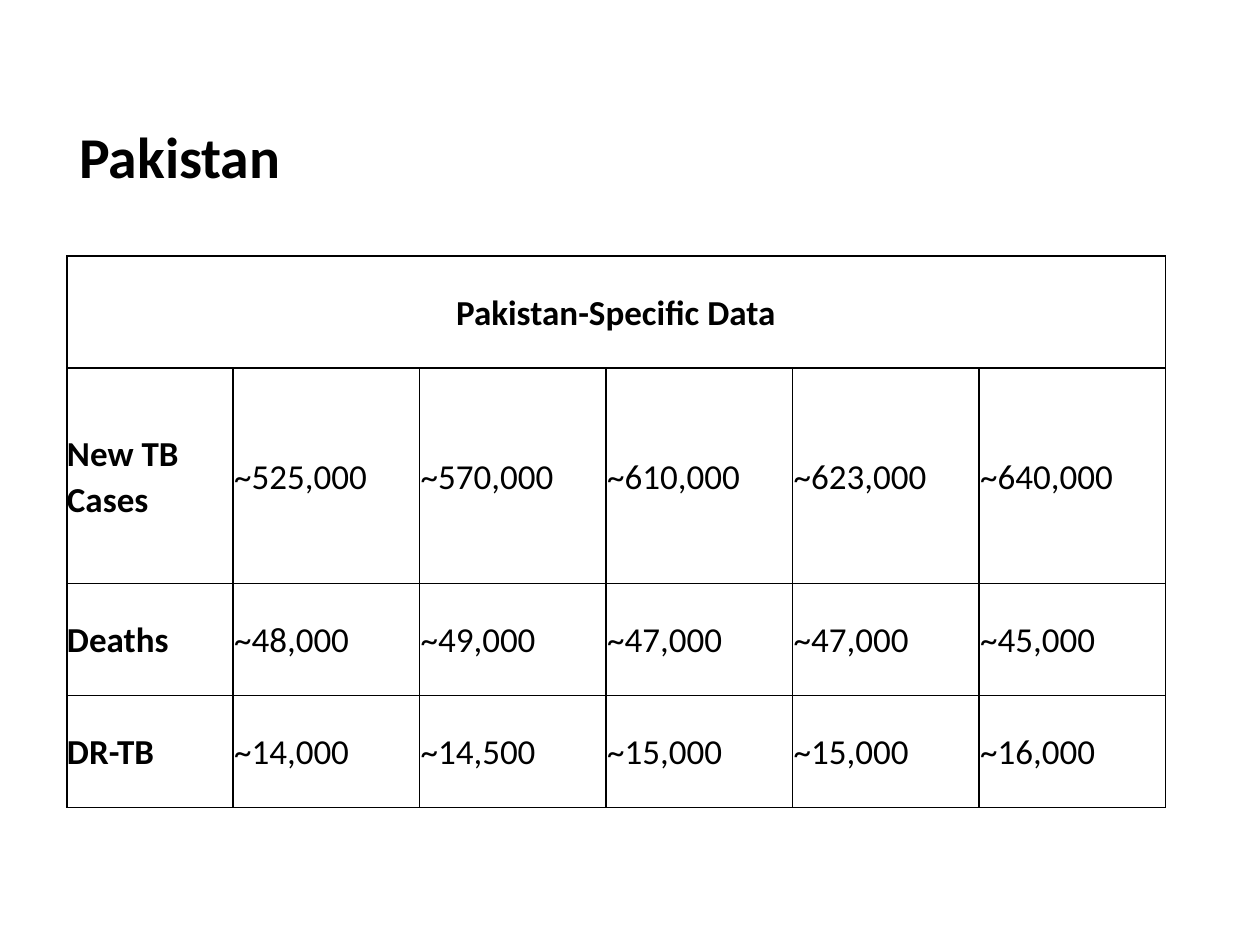
from lxml.etree import SubElement
from pptx import Presentation
from pptx.dml.color import RGBColor
from pptx.enum.text import MSO_ANCHOR, PP_ALIGN
from pptx.oxml.ns import qn
from pptx.util import Cm, Pt

BLACK = RGBColor(0x00, 0x00, 0x00)
FONT = "Calibri"
HEADING = "Pakistan-Specific Data"
ROWS = [
    ["New TB Cases", "~525,000", "~570,000", "~610,000", "~623,000", "~640,000"],
    ["Deaths", "~48,000", "~49,000", "~47,000", "~47,000", "~45,000"],
    ["DR-TB", "~14,000", "~14,500", "~15,000", "~15,000", "~16,000"],
]
COLUMN_WIDTHS = [3.35] + [3.76] * 5
ROW_HEIGHTS = [2.26, 4.34, 2.26, 2.26]


def add_text(paragraph, text, size, bold):
    run = paragraph.add_run()
    run.text = text
    run.font.name = FONT
    run.font.size = Pt(size)
    run.font.bold = bold
    run.font.color.rgb = BLACK


def add_borders(cell):
    properties = cell._tc.get_or_add_tcPr()
    for side in ("a:lnL", "a:lnR", "a:lnT", "a:lnB"):
        line = SubElement(properties, qn(side), w=str(Pt(1)))
        fill = SubElement(line, qn("a:solidFill"))
        SubElement(fill, qn("a:srgbClr"), val=str(BLACK))


presentation = Presentation()
presentation.slide_width = Cm(25.4)
presentation.slide_height = Cm(19.05)
slide = presentation.slides.add_slide(presentation.slide_layouts[6])

# Title
title = slide.shapes.add_textbox(Cm(1.35), Cm(1.27), Cm(19.58), Cm(3.89))
title.text_frame.word_wrap = True
title.text_frame.vertical_anchor = MSO_ANCHOR.MIDDLE
paragraph = title.text_frame.paragraphs[0]
paragraph.line_spacing = 0.9
add_text(paragraph, "Pakistan", 33, True)

# Table grid
table = slide.shapes.add_table(
    len(ROW_HEIGHTS), len(COLUMN_WIDTHS), Cm(1.35), Cm(5.16),
    Cm(sum(COLUMN_WIDTHS)), Cm(sum(ROW_HEIGHTS))).table
table.first_row = False
table.horz_banding = False
for column, width in zip(table.columns, COLUMN_WIDTHS):
    column.width = Cm(width)
for row, height in zip(table.rows, ROW_HEIGHTS):
    row.height = Cm(height)
table.cell(0, 0).merge(table.cell(0, len(COLUMN_WIDTHS) - 1))

# Cell formatting and text
for row_index, values in enumerate([[HEADING] + [""] * 5] + ROWS):
    for column_index, value in enumerate(values):
        cell = table.cell(row_index, column_index)
        add_borders(cell)
        cell.fill.background()
        cell.vertical_anchor = MSO_ANCHOR.MIDDLE
        cell.margin_left = Cm(0.02 if column_index else 0)
        cell.margin_top = cell.margin_right = cell.margin_bottom = Cm(0.02)
        if value:
            paragraph = cell.text_frame.paragraphs[0]
            paragraph.alignment = PP_ALIGN.LEFT if row_index else PP_ALIGN.CENTER
            paragraph.line_spacing = 1.07
            paragraph.space_after = Pt(8)
            add_text(paragraph, value, 20, column_index == 0)

presentation.save("out.pptx")
